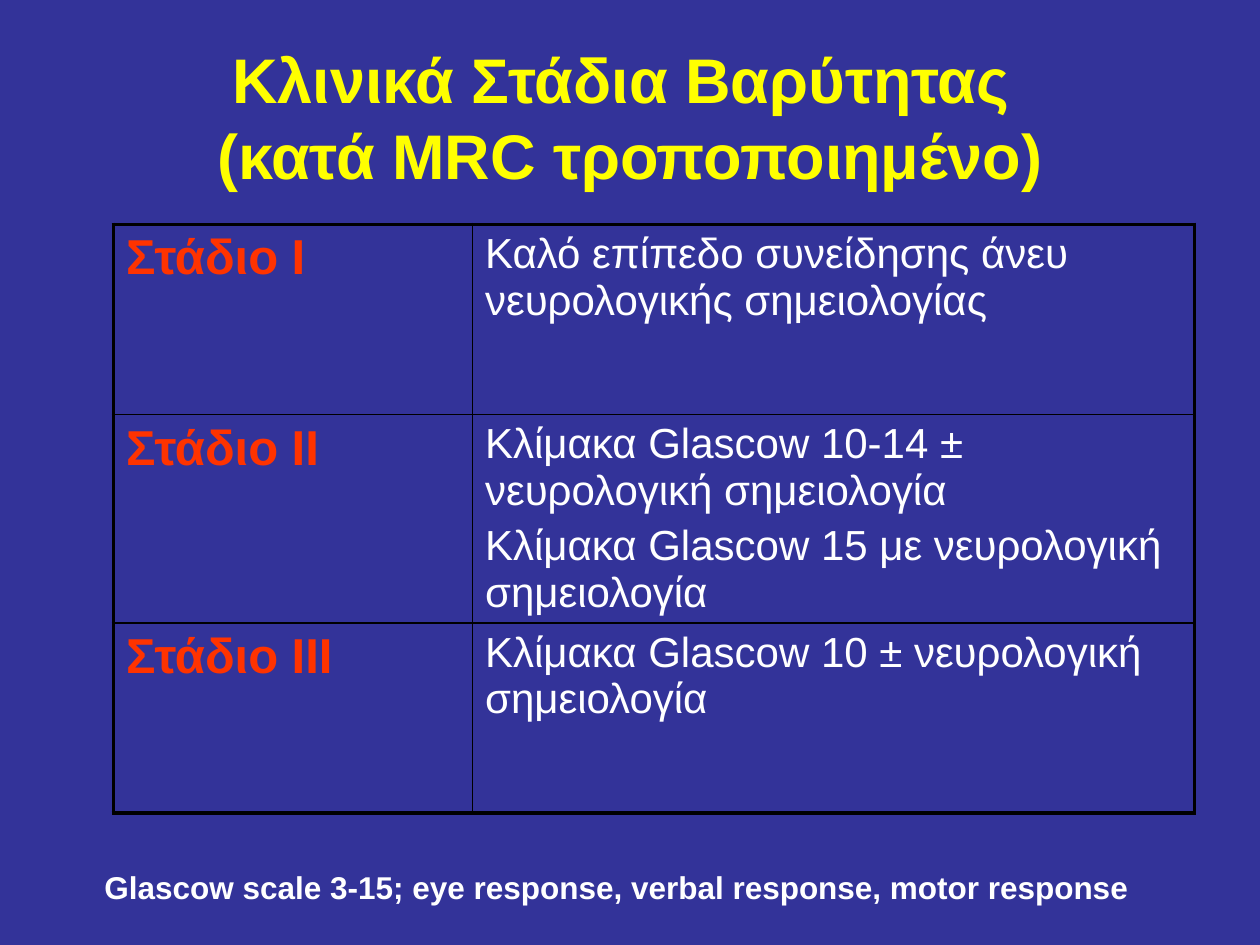
from lxml import etree
from pptx import Presentation
from pptx.dml.color import RGBColor
from pptx.enum.text import MSO_ANCHOR, MSO_AUTO_SIZE, PP_ALIGN
from pptx.oxml.ns import qn
from pptx.util import Inches, Pt

CENTER = PP_ALIGN.CENTER
MIDDLE = MSO_ANCHOR.MIDDLE
NO_FIT = MSO_AUTO_SIZE.NONE
GROW = MSO_AUTO_SIZE.SHAPE_TO_FIT_TEXT

NAVY = RGBColor(0x33, 0x33, 0x99)
YELLOW = RGBColor(0xFF, 0xFF, 0x00)
RED = RGBColor(0xFF, 0x33, 0x00)
WHITE = RGBColor(0xFF, 0xFF, 0xFF)
BLACK = RGBColor(0x00, 0x00, 0x00)

TITLE = {"size": Pt(36), "bold": True}
STAGE = {"size": Pt(28), "bold": True}
DESCRIPTION = {"size": Pt(24), "bold": False}
NOTE = {"size": Pt(18), "bold": True}

STAGES = [
    ("Στάδιο Ι", ["Καλό επίπεδο συνείδησης άνευ νευρολογικής σημειολογίας"]),
    ("Στάδιο ΙΙ", ["Κλίμακα Glascow 10-14 ± νευρολογική σημειολογία",
                   "Κλίμακα Glascow 15 με νευρολογική σημειολογία"]),
    ("Στάδιο ΙΙΙ", ["Κλίμακα Glascow 10 ± νευρολογική σημειολογία"]),
]


class SlideBuilder:
    font = "Arial"
    outer = Pt(2.25)
    inner = Pt(1)
    paragraph_gap = Pt(4.8)

    def __init__(self, prs, background):
        self.s = prs.slides.add_slide(prs.slide_layouts[5])
        self.s.background.fill.solid()
        self.s.background.fill.fore_color.rgb = background

    def text(self, tf, lines, style, color, align=None):
        for i, line in enumerate(lines):
            p = tf.paragraphs[0] if i == 0 else tf.add_paragraph()
            p.text = line
            p.alignment = align
            if i:
                p.space_before = self.paragraph_gap
            for r in p.runs:
                r.font.name = self.font
                r.font.color.rgb = color
                for name, value in style.items():
                    setattr(r.font, name, value)

    def title(self, text, left, top, width, height):
        sp = self.s.shapes.title
        sp.left, sp.top = Inches(left), Inches(top)
        sp.width, sp.height = Inches(width), Inches(height)
        tf = sp.text_frame
        tf.auto_size = NO_FIT
        tf.vertical_anchor = MIDDLE
        self.text(tf, [text], TITLE, YELLOW, CENTER)

    def borders(self, cell, widths):
        tc_pr = cell._tc.get_or_add_tcPr()
        for i, (side, width) in enumerate(widths.items()):
            ln = etree.Element(qn(f"a:ln{side}"), w=str(width))
            fill = etree.SubElement(ln, qn("a:solidFill"))
            etree.SubElement(fill, qn("a:srgbClr"), val=str(BLACK))
            tc_pr.insert(i, ln)

    def table(self, stages, left, top, widths, heights):
        table = self.s.shapes.add_table(
            len(heights), len(widths), Inches(left), Inches(top),
            Inches(sum(widths)), Inches(sum(heights))).table
        for column, width in zip(table.columns, widths):
            column.width = Inches(width)
        for row, height in zip(table.rows, heights):
            row.height = Inches(height)
        last_row, last_col = len(heights) - 1, len(widths) - 1
        for i, (stage, descriptions) in enumerate(stages):
            contents = [([stage], STAGE, RED), (descriptions, DESCRIPTION, WHITE)]
            for j, content in enumerate(contents):
                cell = table.cell(i, j)
                cell.fill.background()
                self.text(cell.text_frame, *content)
                edges = {"L": j == 0, "R": j == last_col,
                         "T": i == 0, "B": i == last_row}
                self.borders(cell, {side: self.outer if edge else self.inner
                                    for side, edge in edges.items()})

    def note(self, text, left, top, width, height):
        sp = self.s.shapes.add_textbox(Inches(left), Inches(top),
                                       Inches(width), Inches(height))
        tf = sp.text_frame
        tf.word_wrap = False
        tf.auto_size = GROW
        self.text(tf, [text], NOTE, WHITE)


def main():
    prs = Presentation()
    prs.slide_width, prs.slide_height = Inches(10), Inches(7.5)
    slide = SlideBuilder(prs, NAVY)
    slide.title("Κλινικά Στάδια Βαρύτητας \v(κατά MRC τροποποιημένο)",
                0.5, 0.3, 9, 1.25)
    slide.table(STAGES, 0.9, 1.78, [2.85, 5.73], [1.51, 1.65, 1.51])
    slide.note("Glascow scale 3-15; eye response, verbal response, motor response",
               0.73, 6.84, 8.41, 0.4)
    prs.save("out.pptx")


if __name__ == "__main__":
    main()
